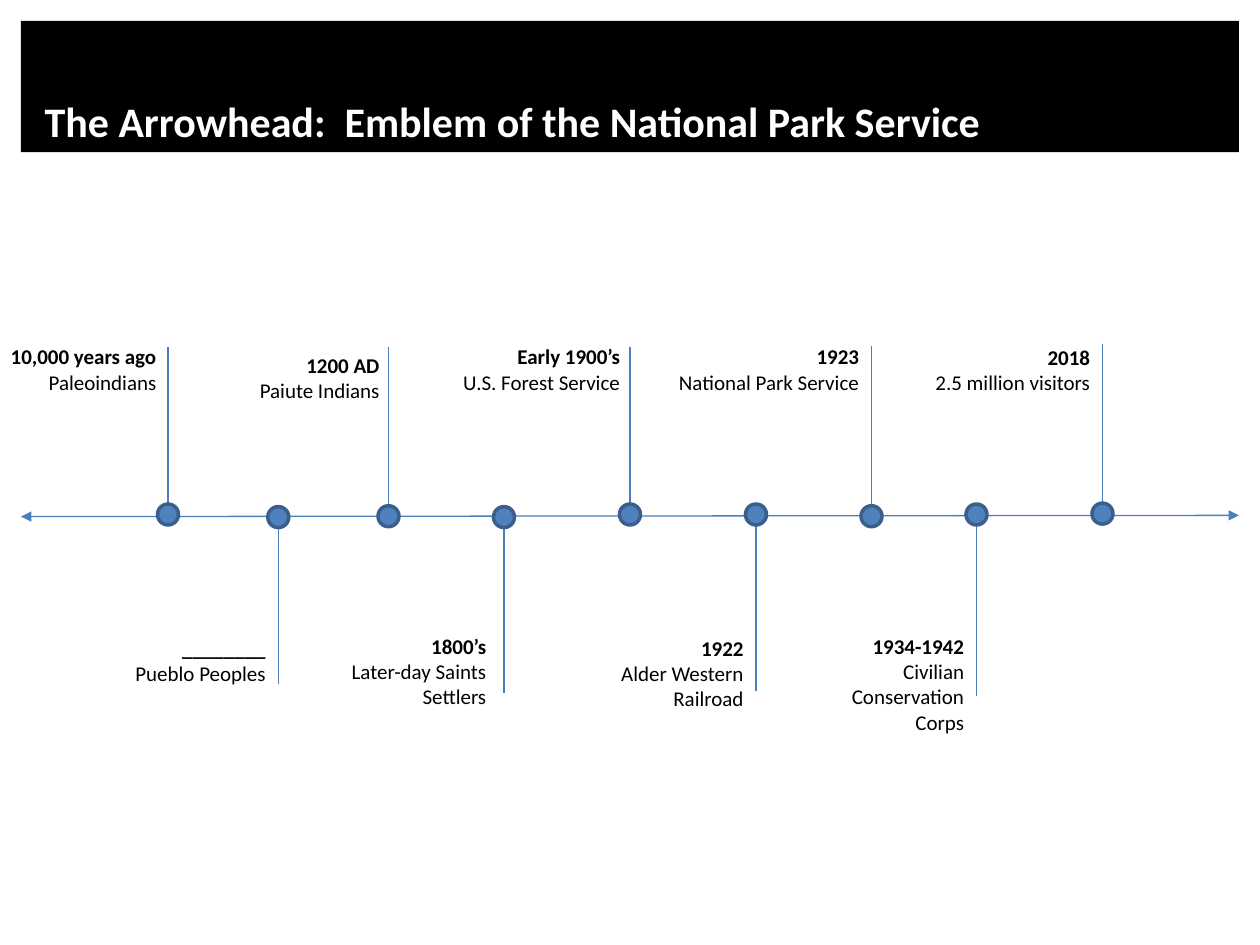
from collections import namedtuple

from lxml import etree
from pptx import Presentation
from pptx.dml.color import RGBColor
from pptx.enum import shapes, text
from pptx.oxml import ns
from pptx.util import Pt

BLACK = RGBColor(0x00, 0x00, 0x00)
WHITE = RGBColor(0xFF, 0xFF, 0xFF)
LINE_BLUE = RGBColor(0x4B, 0x7E, 0xBC)
DOT_BLUE = RGBColor(0x4F, 0x81, 0xBD)
DOT_EDGE = RGBColor(0x3A, 0x5F, 0x8C)

FONT = "Calibri"
STEM_LENGTH = 102
DOT_SIZE = 12

Box = namedtuple("Box", "left top width height")
Event = namedtuple(
    "Event", "date name x dot_y stem_end label_top label_width label_height label_shift"
)

EVENTS = [
    Event("10,000 years ago", "Paleoindians", 84, 101, 5, 0, 105, 36, 0.5),
    Event("________", "Pueblo Peoples", 147, 102.5, 198, 166.5, 105, 36, 0),
    Event("1200 AD", "Paiute Indians", 210, 102, 5, 5, 86, 36, 2),
    Event("1800’s", "Later-day Saints Settlers", 276, 102.5, 203, 165.5, 105, 51, -3),
    Event("Early 1900’s", "U.S. Forest Service", 348, 101, 5, 0, 105, 36, 1.5),
    Event("1922", "Alder Western Railroad", 420, 101, 202, 166.5, 125, 36, 0),
    Event("1923", "National Park Service", 486, 102, 4.5, 0, 125, 36, 0),
    Event("1934-1942", "Civilian Conservation Corps", 546, 101, 204.5, 165.5, 107, 66, 0),
    Event("2018", "2.5 million visitors", 618, 100.5, 3.5, 0.5, 107, 36, 0),
]


def format_run(run, size, color, bold):
    run.font.name = FONT
    run.font.size = Pt(size)
    run.font.color.rgb = color
    run.font.bold = bold


def add_line(slide, x1, y1, x2, y2):
    line = slide.shapes.add_connector(
        shapes.MSO_CONNECTOR.STRAIGHT, Pt(x1), Pt(y1), Pt(x2), Pt(y2)
    )
    line.line.color.rgb = LINE_BLUE
    line.line.width = Pt(0.75)
    etree.SubElement(line._element.spPr, ns.qn("a:effectLst"))
    return line


def add_title(slide, box):
    title = slide.shapes.title
    title.left, title.top, title.width, title.height = map(Pt, box)
    title.fill.solid()
    title.fill.fore_color.rgb = BLACK
    frame = title.text_frame
    frame.text = "The Arrowhead:  Emblem of the National Park Service"
    frame.auto_size = text.MSO_AUTO_SIZE.NONE
    frame.vertical_anchor = text.MSO_ANCHOR.BOTTOM
    frame.margin_left = Pt(13.5)
    heading = frame.paragraphs[0]
    heading.alignment = text.PP_ALIGN.LEFT
    format_run(heading.runs[0], 24, WHITE, True)


def add_label(slide, event, box):
    right = box.left + event.x + event.label_shift
    label = slide.shapes.add_textbox(
        Pt(right - event.label_width), Pt(box.top + event.label_top),
        Pt(event.label_width), Pt(event.label_height),
    )
    frame = label.text_frame
    frame.word_wrap = True
    frame.auto_size = text.MSO_AUTO_SIZE.SHAPE_TO_FIT_TEXT
    frame.text = f"{event.date}\n{event.name}"
    for paragraph, bold in zip(frame.paragraphs, (True, False)):
        paragraph.alignment = text.PP_ALIGN.RIGHT
        format_run(paragraph.runs[0], 12, BLACK, bold)


def add_stem(slide, event, box):
    x = box.left + event.x
    outer = box.top + event.stem_end
    direction = 1 if event.stem_end < event.dot_y else -1
    add_line(slide, x, outer, x, outer + direction * STEM_LENGTH)


def add_axis(slide, box):
    axis = add_line(
        slide, box.left, box.top + 102.2, box.left + box.width, box.top + 101.5
    )
    outline = axis.line._get_or_add_ln()
    for end in ("a:headEnd", "a:tailEnd"):
        etree.SubElement(outline, ns.qn(end), type="triangle")


def add_dot(slide, event, box):
    dot = slide.shapes.add_shape(
        shapes.MSO_SHAPE.OVAL,
        Pt(box.left + event.x - DOT_SIZE / 2),
        Pt(box.top + event.dot_y - DOT_SIZE / 2),
        Pt(DOT_SIZE), Pt(DOT_SIZE),
    )
    dot.shadow.inherit = False
    dot.fill.solid()
    dot.fill.fore_color.rgb = DOT_BLUE
    dot.line.color.rgb = DOT_EDGE
    dot.line.width = Pt(2)


def add_timeline(slide, box):
    for event in EVENTS:
        add_label(slide, event, box)
        add_stem(slide, event, box)
    add_axis(slide, box)
    for event in EVENTS:
        add_dot(slide, event, box)


def main():
    deck = Presentation()
    deck.slide_width, deck.slide_height = Pt(720), Pt(540)
    slide = deck.slides.add_slide(deck.slide_layouts.get_by_name("Title Only"))
    add_title(slide, Box(12, 12, 696, 75))
    add_timeline(slide, Box(12, 193, 696, 232))
    deck.save("out.pptx")


if __name__ == "__main__":
    main()
